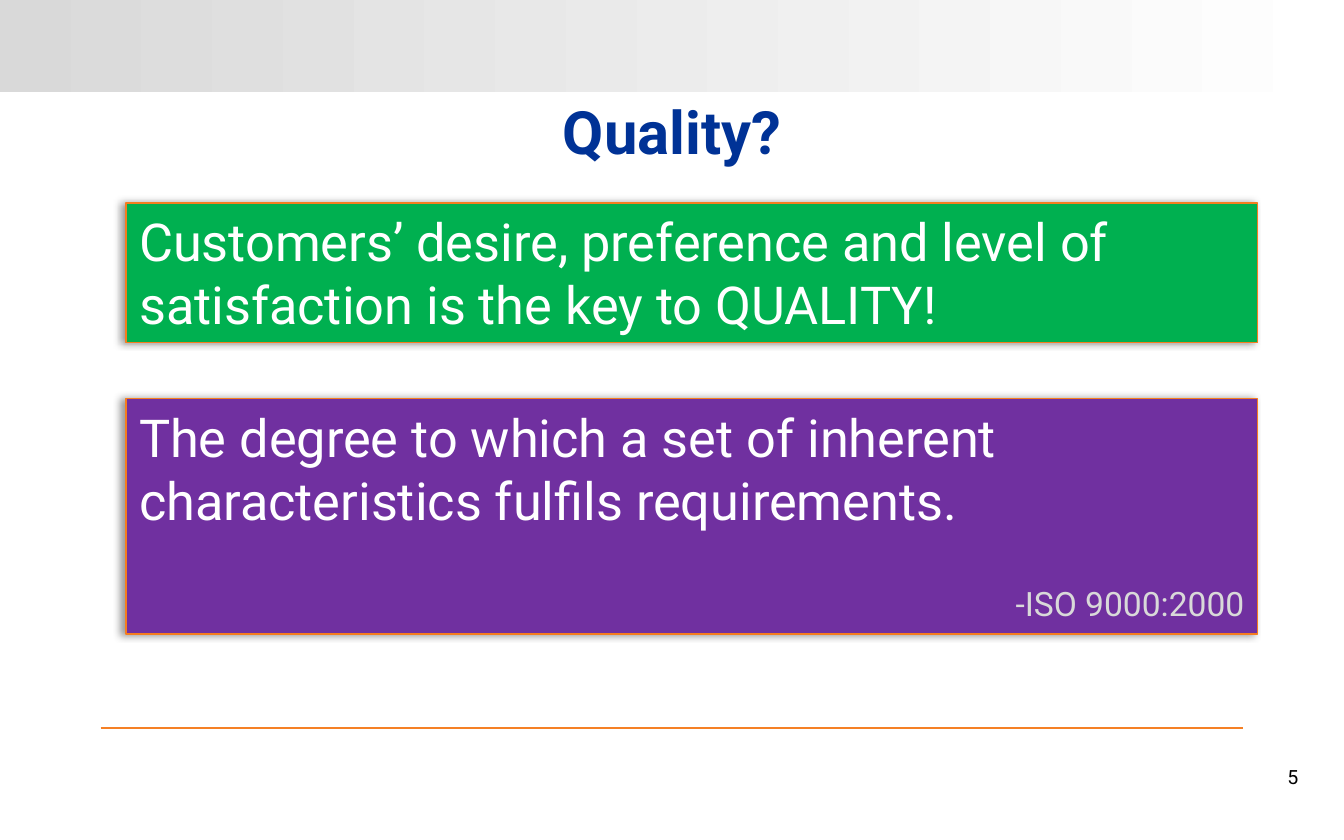
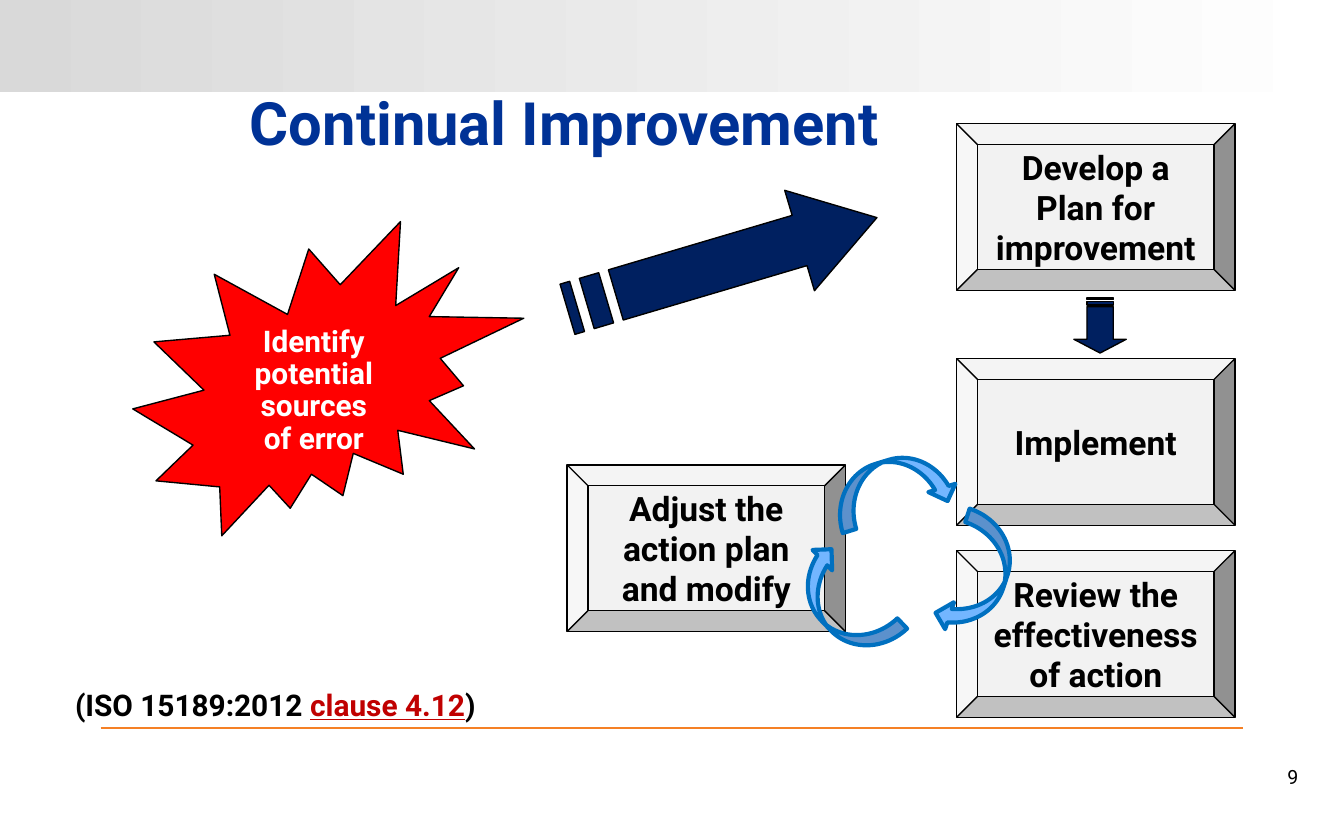
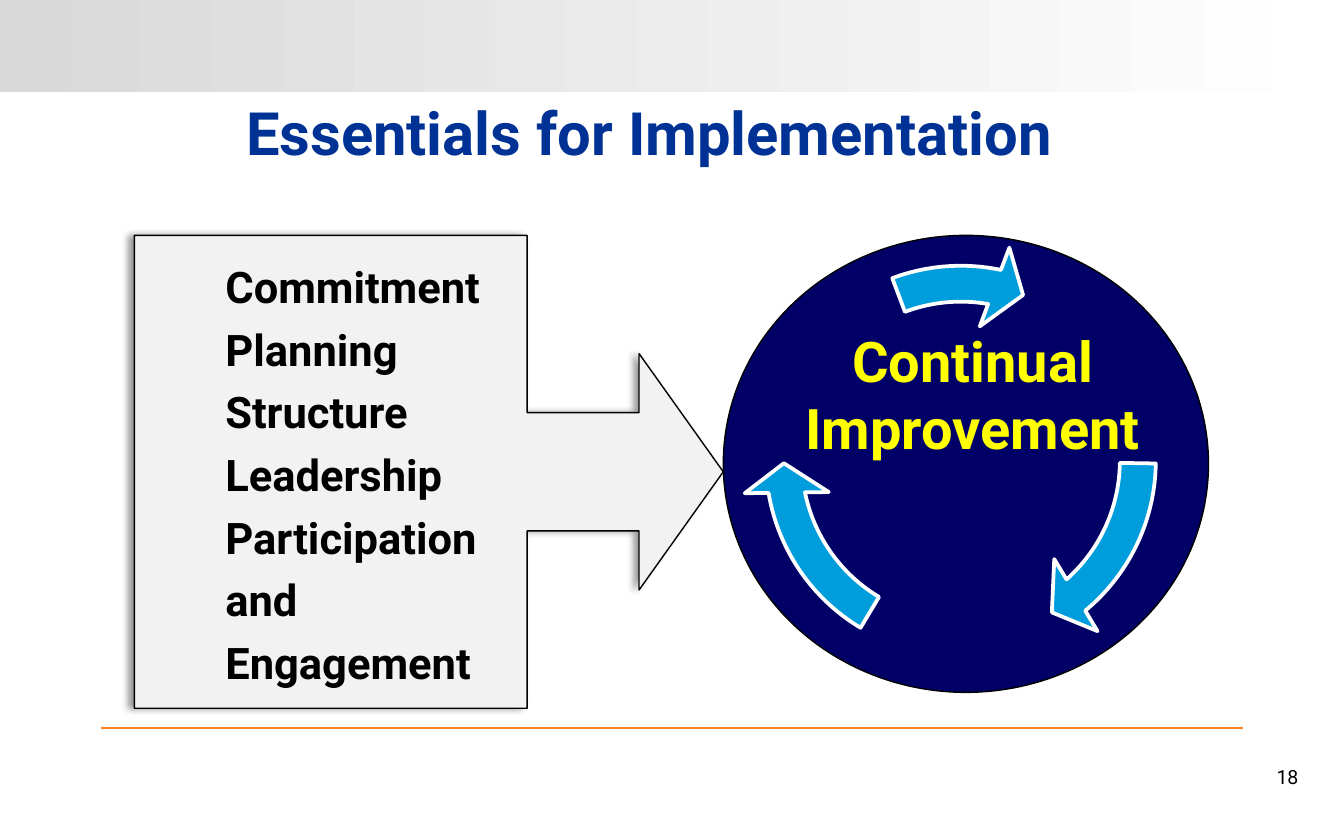
from dataclasses import dataclass

from lxml import etree
from pptx import Presentation
from pptx.dml.color import RGBColor
from pptx.enum.shapes import MSO_CONNECTOR, MSO_SHAPE
from pptx.enum.text import MSO_ANCHOR, MSO_AUTO_SIZE, PP_ALIGN
from pptx.oxml.ns import qn
from pptx.util import Cm, Pt


@dataclass(frozen=True)
class Theme:
    font: str = "Roboto"
    title: str = "003296"
    ink: str = "000000"
    paper: str = "FFFFFF"
    grey: str = "D9D9D9"
    light: str = "F2F2F2"
    rule: str = "F58025"
    panel_line: str = "F57D1F"
    green: str = "00B050"
    purple: str = "7030A0"
    red: str = "FF0000"
    clause: str = "C00000"
    navy: str = "002060"
    disc: str = "000066"
    yellow: str = "FFFF00"
    sky: str = "73B6FF"
    sky_line: str = "0070C0"
    cyan: str = "009DDC"
    title_size: float = 32
    statement_size: float = 28
    disc_size: float = 30
    list_size: float = 23.3
    step_size: float = 18
    note_size: float = 16
    number_size: float = 10.5


THEME = Theme()


@dataclass(frozen=True)
class Box:
    """A rectangle in centimetres."""
    left: float
    top: float
    width: float
    height: float

    def inner(self, left, top, width, height):
        return Box(self.left + left, self.top + top, width, height)

    def lengths(self):
        return Cm(self.left), Cm(self.top), Cm(self.width), Cm(self.height)


def rgb(colour):
    return RGBColor.from_string(colour)


def format_run(run, size, colour, bold=False):
    run.font.name = THEME.font
    run.font.size = Pt(size)
    run.font.bold = bold
    run.font.color.rgb = rgb(colour)


def write(shape, text, size, colour, bold=False, align=PP_ALIGN.LEFT,
          anchor=MSO_ANCHOR.TOP, wrap=True, spacing=1.0):
    frame = shape.text_frame
    frame.text = text
    frame.word_wrap = wrap
    frame.auto_size = MSO_AUTO_SIZE.NONE
    frame.vertical_anchor = anchor
    for paragraph in frame.paragraphs:
        paragraph.alignment = align
        paragraph.line_spacing = spacing
        for run in paragraph.runs:
            format_run(run, size, colour, bold)
    return frame


def paint(shape, fill, line=None, line_width=0.75):
    shape.shadow.inherit = False
    shape.fill.solid()
    shape.fill.fore_color.rgb = rgb(fill)
    if line:
        shape.line.color.rgb = rgb(line)
        shape.line.width = Pt(line_width)
    else:
        shape.line.fill.background()


def add_shape(slide, kind, box, fill, line=None, line_width=0.75, adjustments=()):
    shape = slide.shapes.add_shape(kind, *box.lengths())
    for index, value in enumerate(adjustments):
        shape.adjustments[index] = value
    paint(shape, fill, line, line_width)
    return shape


def cast_shadow_left(shape):
    effects = shape.element.spPr.find(qn("a:effectLst"))
    shadow = etree.SubElement(
        effects, qn("a:outerShdw"), blurRad=str(Pt(4)), dist=str(Pt(3)),
        dir=str(180 * 60000), algn="r", rotWithShape="0")
    colour = etree.SubElement(shadow, qn("a:srgbClr"), val=THEME.ink)
    etree.SubElement(colour, qn("a:alpha"), val="40000")


def add_striped_arrow(slide, box, rotation):
    """Draw a right arrow with two tail stripes, turned about its centre."""
    def across(fractions, edge):
        return [(fraction * Cm(box.width), edge * Cm(box.height)) for fraction in fractions]

    def stripe(start, end):
        return across((start, end), 0.25) + across((end, start), 0.75)

    body = (across((5 / 32, 3 / 4), 0.25) + across((3 / 4,), 0) + across((1,), 0.5)
            + across((3 / 4,), 1) + across((3 / 4, 5 / 32), 0.75))
    outlines = [body, stripe(1 / 16, 1 / 8), stripe(0, 1 / 32)]
    builder = slide.shapes.build_freeform(*body[0])
    for outline in outlines:
        builder.move_to(*outline[0])
        builder.add_line_segments(outline[1:], close=True)
    arrow = builder.convert_to_shape(Cm(box.left), Cm(box.top))
    paint(arrow, THEME.navy, THEME.ink)
    arrow.rotation = rotation


def decorate_layout(layout, slide):
    """Move the shared band and rule, drawn on a slide, to its layout."""
    for placeholder in list(layout.placeholders):
        if placeholder.placeholder_format.idx >= 10:
            layout.shapes.element.remove(placeholder.element)

    band = add_shape(slide, MSO_SHAPE.RECTANGLE, Box(0, 0, 25.4, 1.74), THEME.grey)
    band.fill.gradient()
    band.fill.gradient_angle = 0
    for stop, colour in zip(band.fill.gradient_stops, (THEME.grey, THEME.paper)):
        stop.color.rgb = rgb(colour)

    rule = slide.shapes.add_connector(
        MSO_CONNECTOR.STRAIGHT, Cm(1.9), Cm(13.77), Cm(23.5), Cm(13.77))
    rule.line.color.rgb = rgb(THEME.rule)
    rule.line.width = Pt(1)
    etree.SubElement(rule.element.spPr, qn("a:effectLst"))

    for shape in (band, rule):
        layout.shapes.element.append(shape.element)


def add_titled_slide(presentation, title, title_box, number):
    slide = presentation.slides.add_slide(presentation.slide_layouts[5])
    heading = slide.shapes.title
    heading.left, heading.top, heading.width, heading.height = title_box.lengths()
    frame = write(heading, title, THEME.title_size, THEME.title, bold=True, spacing=0.85)
    frame.margin_left = frame.margin_right = 0

    page = slide.shapes.add_textbox(*Box(18.82, 14.3, 5.72, 0.84).lengths())
    frame = write(page, str(number), THEME.number_size, THEME.ink,
                  align=PP_ALIGN.RIGHT, anchor=MSO_ANCHOR.MIDDLE, spacing=0.9)
    frame.margin_left = frame.margin_right = 0
    return slide


def add_quality_panels(slide, box):
    panels = [
        (0, 2.64, THEME.green,
         "Customers’ desire, preference and level of satisfaction is the key to QUALITY!"),
        (3.7, 4.45, THEME.purple,
         "The degree to which a set of inherent characteristics fulfils requirements."),
    ]
    for top, height, fill, statement in panels:
        panel = add_shape(slide, MSO_SHAPE.RECTANGLE, box.inner(0, top, box.width, height),
                          fill, THEME.panel_line)
        cast_shadow_left(panel)
        frame = write(panel, statement, THEME.statement_size, THEME.paper)

    source = frame.add_paragraph()
    source.text = "-ISO 9000:2000"
    source.alignment = PP_ALIGN.RIGHT
    source.space_before = Pt(28)
    format_run(source.runs[0], THEME.step_size, THEME.grey)


def add_error_burst(slide, box):
    burst = add_shape(slide, MSO_SHAPE.EXPLOSION2, box, THEME.red, THEME.ink)
    frame = write(burst, "Identify\npotential\nsources\nof error", THEME.note_size,
                  THEME.paper, bold=True, align=PP_ALIGN.CENTER,
                  anchor=MSO_ANCHOR.MIDDLE, wrap=False, spacing=0.9)
    frame.margin_top = Cm(0.4)


def add_clause_note(slide, box):
    note = slide.shapes.add_textbox(*box.lengths())
    frame = write(note, "(ISO 15189:2012 ", THEME.note_size, THEME.ink, bold=True,
                  anchor=MSO_ANCHOR.MIDDLE, spacing=0.9)
    for text, colour, underline in (("clause 4.12", THEME.clause, True),
                                    (")", THEME.ink, False)):
        run = frame.paragraphs[0].add_run()
        run.text = text
        format_run(run, THEME.note_size, colour, bold=True)
        run.font.underline = underline


def add_action_cycle(slide, box):
    steps = [
        (0.12, 6.45, "Adjust the\naction plan\nand modify"),
        (7.48, 0, "Develop a\nPlan for\nimprovement"),
        (7.48, 4.44, "Implement"),
        (7.48, 8.07, "Review the\neffectiveness\nof action"),
    ]
    for left, top, text in steps:
        step = add_shape(slide, MSO_SHAPE.BEVEL, box.inner(left, top, 5.26, 3.15),
                         THEME.light, THEME.ink, adjustments=(0.125,))
        write(step, text, THEME.step_size, THEME.ink, bold=True, align=PP_ALIGN.CENTER,
              anchor=MSO_ANCHOR.MIDDLE, wrap=False)

    add_striped_arrow(slide, box.inner(0, 1.65, 6.1, 1.98), 343.5)
    add_striped_arrow(slide, box.inner(9.67, 3.32, 1.04, 0.99), 90)

    for left, top, rotation in ((6.7, 8.02, 108.1), (4.18, 8.53, 226.4), (5.12, 6.35, 343)):
        arrow = add_shape(slide, MSO_SHAPE.CURVED_DOWN_ARROW,
                          box.inner(left, top, 2.34, 1.07), THEME.sky, THEME.sky_line, 2.25)
        arrow.rotation = rotation


def add_essentials_callout(slide, box):
    callout = add_shape(slide, MSO_SHAPE.RIGHT_ARROW_CALLOUT, box, THEME.light, THEME.ink,
                        adjustments=(0.25, 0.25, 0.178, 0.667))
    cast_shadow_left(callout)
    essentials = add_shape(slide, MSO_SHAPE.RECTANGLE, box.inner(0.2, 0.15, 7.14, 8.53),
                           THEME.light)
    frame = write(essentials,
                  "Commitment\nPlanning\nStructure\nLeadership Participation and Engagement",
                  THEME.list_size, THEME.ink, bold=True, spacing=1.2)
    frame.margin_left = Cm(1.52)


def add_improvement_disc(slide, box):
    add_shape(slide, MSO_SHAPE.OVAL, box, THEME.disc, THEME.ink)
    for end, start in ((29.669, 0.497), (101.749, 72.576), (168.596, 149.65)):
        add_shape(slide, MSO_SHAPE.CIRCULAR_ARROW, box.inner(0.35, 0.12, 8.28, 8.28),
                  THEME.cyan, THEME.paper, 2,
                  adjustments=(0.082, 5.754, end, start, 0.096))
    label = slide.shapes.add_textbox(*box.inner(0.22, 1.6, 8.99, 2.82).lengths())
    write(label, "Continual\nImprovement", THEME.disc_size, THEME.yellow, bold=True,
          align=PP_ALIGN.CENTER)


def main():
    presentation = Presentation()
    presentation.slide_width = Cm(25.4)
    presentation.slide_height = Cm(15.88)

    slide = add_titled_slide(presentation, "Quality?", Box(10.64, 1.88, 4.88, 1.3), 5)
    decorate_layout(slide.slide_layout, slide)
    add_quality_panels(slide, Box(2.38, 3.84, 21.39, 8.15))

    slide = add_titled_slide(presentation, "Continual Improvement",
                             Box(4.72, 1.7, 13.44, 1.3), 9)
    add_clause_note(slide, Box(1.17, 12.85, 8.51, 1.02))
    add_error_burst(slide, Box(2.51, 4.19, 7.39, 5.94))
    add_action_cycle(slide, Box(10.6, 2.34, 12.74, 11.22))

    slide = add_titled_slide(presentation, "Essentials for Implementation",
                             Box(4.65, 1.9, 16.08, 1.3), 18)
    add_essentials_callout(slide, Box(2.54, 4.45, 11.13, 8.94))
    add_improvement_disc(slide, Box(13.67, 4.45, 9.17, 8.64))

    presentation.save("out.pptx")


if __name__ == "__main__":
    main()
